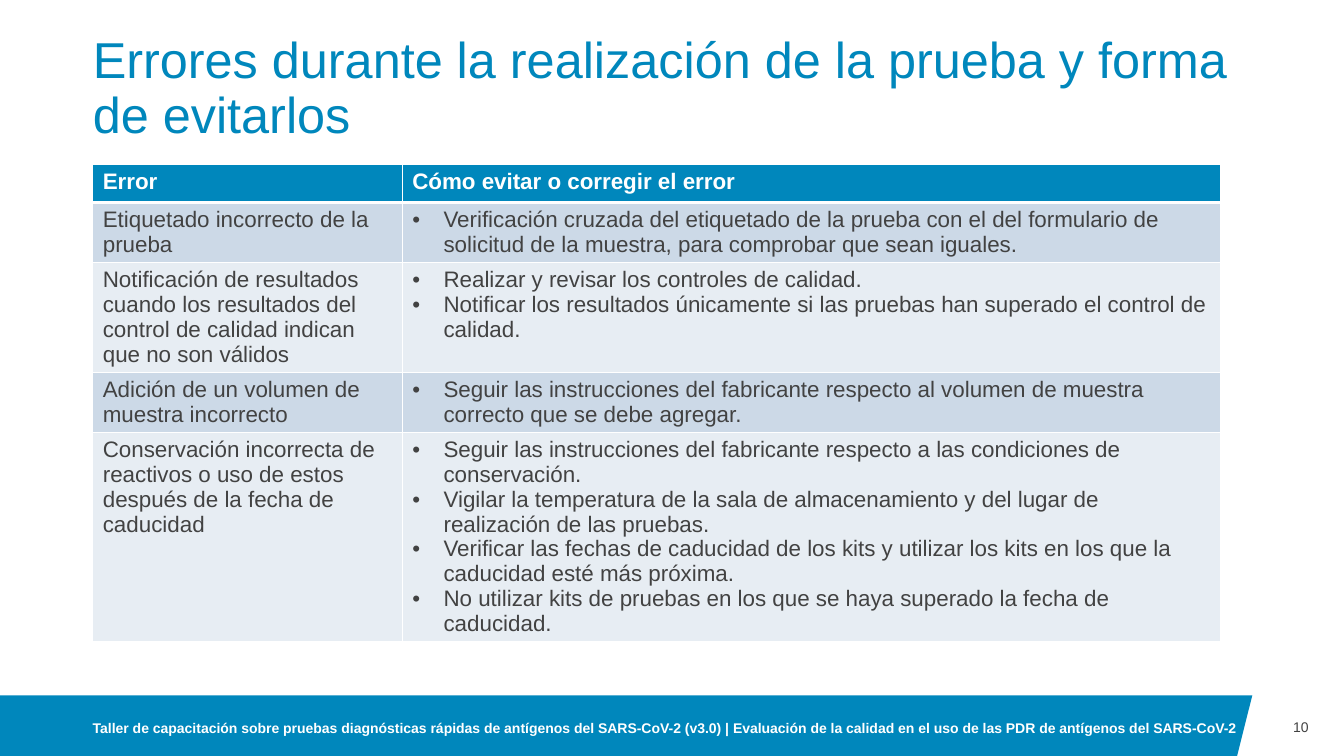
from lxml import etree
from pptx import Presentation
from pptx.dml.color import RGBColor
from pptx.enum.text import MSO_ANCHOR as ANCHOR, MSO_AUTO_SIZE as AUTO, PP_ALIGN as ALIGN
from pptx.oxml.ns import qn
from pptx.util import Inches, Pt

W, H = 13.33, 7.5
LEFT, BAND_TOP, BAND_RIGHT = 0.92, 6.9, 12.42
BLUE, GREY, WHITE = "0087BC", "424242", "FFFFFF"
BANDS = ["CCD9E7", "E7EDF3"]


def rgb(color):
    return RGBColor.from_string(color)


def write(p, text, **fmt):
    r = p.add_run()
    r.text = text
    r.font.color.rgb = rgb(fmt.pop("color"))
    for name, value in {"name": "Arial", "bold": False, **fmt}.items():
        setattr(r.font, name, value)


prs = Presentation()
prs.slide_width, prs.slide_height = Inches(W), Inches(H)
s = prs.slides.add_slide(prs.slide_layouts[5])

# Footer band with a slanted right end
fb = s.shapes.build_freeform(0, Inches(BAND_TOP))
fb.add_line_segments([(Inches(x), Inches(y)) for x, y in
                      [(BAND_RIGHT, BAND_TOP), (12.27, H), (0, H)]])
band = fb.convert_to_shape()
band.shadow.inherit = False
band.fill.solid()
band.fill.fore_color.rgb = rgb(BLUE)
band.line.fill.background()

# Title, footer and page number
footer = ("Taller de capacitación sobre pruebas diagnósticas rápidas de antígenos del SARS-CoV-2 (v3.0)"
          " | Evaluación de la calidad en el uso de las PDR de antígenos del SARS-CoV-2")
title = "Errores durante la realización de la prueba y forma de evitarlos"
texts = [
    (s.shapes.title, (LEFT, 0.4, 11.5, 1.03), title, ANCHOR.BOTTOM, ALIGN.LEFT,
     {"size": Pt(36), "color": BLUE}),
    (None, (LEFT, 6.95, 11.43, 0.55), footer, ANCHOR.MIDDLE, ALIGN.LEFT,
     {"size": Pt(10), "color": WHITE, "bold": True}),
    (None, (BAND_RIGHT, BAND_TOP, 0.56, 0.63), "10", ANCHOR.MIDDLE, ALIGN.RIGHT,
     {"size": Pt(10), "color": GREY}),
]
for sp, box, text, anchor, align, fmt in texts:
    sp = sp or s.shapes.add_textbox(0, 0, 0, 0)
    for name, value in zip(("left", "top", "width", "height"), box):
        setattr(sp, name, Inches(value))
    tf = sp.text_frame
    for name, value in {"word_wrap": True, "auto_size": AUTO.NONE, "vertical_anchor": anchor,
                        "margin_left": 0, "margin_right": 0,
                        "margin_top": 0, "margin_bottom": 0}.items():
        setattr(tf, name, value)
    p = tf.paragraphs[0]
    p.alignment = align
    write(p, text, **fmt)
s.shapes.title.text_frame.paragraphs[0].line_spacing = 0.9

# Table content: error, then the ways to avoid it
rows = [
    ("Error", ["Cómo evitar o corregir el error"]),
    ("Etiquetado incorrecto de la prueba",
     ["Verificación cruzada del etiquetado de la prueba con el del formulario de solicitud"
      " de la muestra, para comprobar que sean iguales."]),
    ("Notificación de resultados cuando los resultados del control de calidad indican que no son válidos",
     ["Realizar y revisar los controles de calidad.",
      "Notificar los resultados únicamente si las pruebas han superado el control de calidad."]),
    ("Adición de un volumen de muestra incorrecto",
     ["Seguir las instrucciones del fabricante respecto al volumen de muestra correcto que se debe agregar."]),
    ("Conservación incorrecta de reactivos o uso de estos después de la fecha de caducidad",
     ["Seguir las instrucciones del fabricante respecto a las condiciones de conservación.",
      "Vigilar la temperatura de la sala de almacenamiento y del lugar de realización de las pruebas.",
      "Verificar las fechas de caducidad de los kits y utilizar los kits en los que la caducidad"
      " esté más próxima.",
      "No utilizar kits de pruebas en los que se haya superado la fecha de caducidad."]),
]
col_widths = [3.07, 8.12]
row_heights = [0.38, 0.59, 1.09, 0.59, 2.07]
table = s.shapes.add_table(len(rows), 2, Inches(LEFT), Inches(1.63),
                           Inches(sum(col_widths)), Inches(sum(row_heights))).table
for col, width in zip(table.columns, col_widths):
    col.width = Inches(width)

for i, (error, remedies) in enumerate(rows):
    table.rows[i].height = Inches(row_heights[i])
    header = i == 0
    for j, lines in enumerate([[error], remedies]):
        cell = table.cell(i, j)
        cell.fill.solid()
        cell.fill.fore_color.rgb = rgb(BLUE if header else BANDS[(i - 1) % 2])

        # Cell text, bulleted in the second column
        for k, line in enumerate(lines):
            tf = cell.text_frame
            p = tf.add_paragraph() if k else tf.paragraphs[0]
            write(p, line, size=Pt(16), color=WHITE if header else GREY, bold=header)
            if j == 1 and not header:
                pPr = p._p.get_or_add_pPr()
                pPr.set("marL", str(Inches(0.31)))
                pPr.set("indent", str(-Inches(0.31)))
                etree.SubElement(pPr, qn("a:buFont"), typeface="Arial")
                etree.SubElement(pPr, qn("a:buChar"), char="•")

        # White borders, thicker under the header
        tcPr = cell._tc.get_or_add_tcPr()
        for n, side in enumerate(["lnL", "lnR", "lnT", "lnB"]):
            thick = (i, side) in [(0, "lnB"), (1, "lnT")]
            ln = etree.Element(qn("a:" + side), w=str(Pt(3 if thick else 1)))
            fill = etree.SubElement(ln, qn("a:solidFill"))
            etree.SubElement(fill, qn("a:srgbClr"), val=WHITE)
            tcPr.insert(n, ln)

prs.save("out.pptx")
